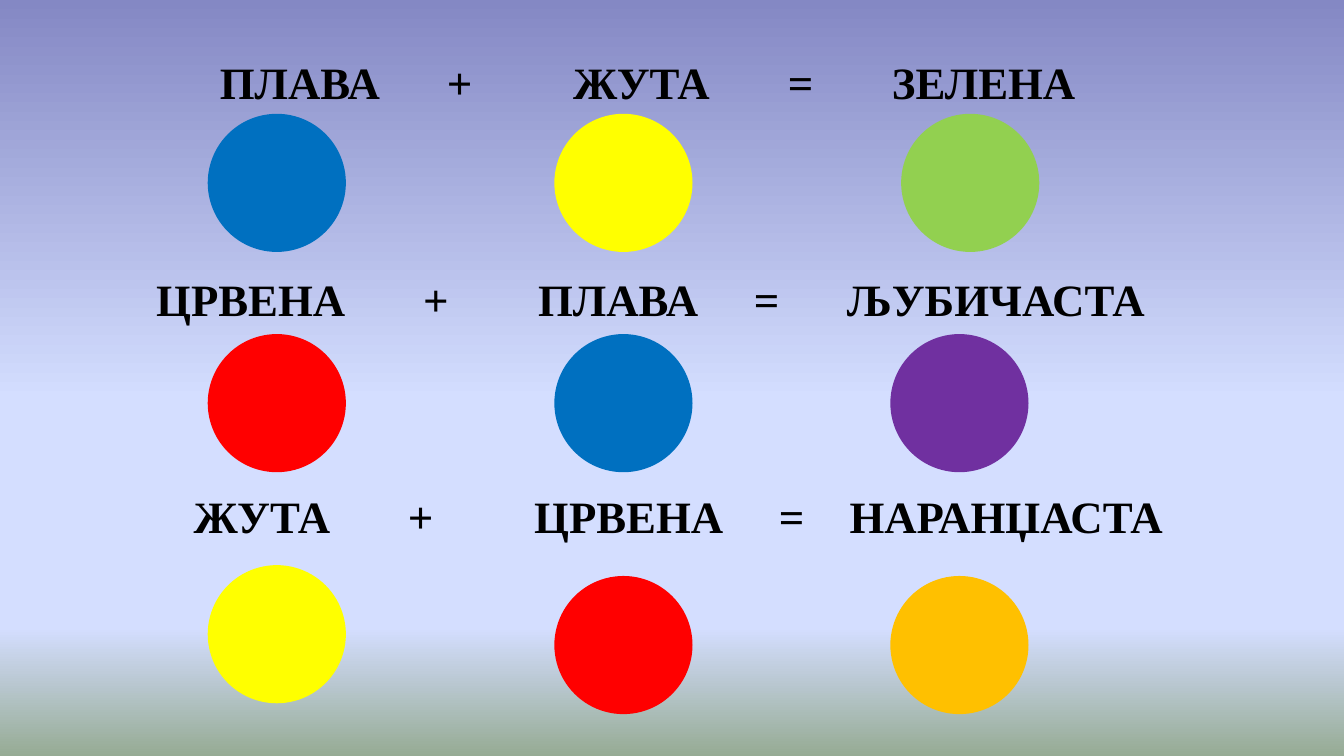
from copy import deepcopy

from pptx import Presentation
from pptx.dml.color import RGBColor
from pptx.enum import shapes, text
from pptx.oxml import ns
from pptx.util import Pt
from lxml import etree

FONT, SIZE = "Times New Roman", 24
ROW_GAP = 87.6
DIAMETER = 72
BLUE, YELLOW, RED = "0070C0", "FFFF00", "FF0000"
GREEN, PURPLE, ORANGE = "92D050", "7030A0", "FFC000"
SKY = [(0, "8488C4"), (0.53, "D4DEFF"), (0.83, "D4DEFF"), (1, "96AB94")]

# words, centre of each word, colours, left and top of each circle
MIXES = [
    (["ПЛАВА", "+", "ЖУТА", "=", "ЗЕЛЕНА"], [109, 194.6, 292, 377.3, 475.3],
     [BLUE, YELLOW, GREEN], [(112.3, 62), (298, 62), (483.8, 62)]),
    (["ЦРВЕНА", "+", "ПЛАВА", "=", "ЉУБИЧАСТА"], [82.7, 181.8, 279.5, 359, 481.8],
     [RED, BLUE, PURPLE], [(112.3, 180), (298, 180), (478, 180)]),
    (["ЖУТА", "+", "ЦРВЕНА", "=", "НАРАНЏАСТА"], [88.6, 173.7, 285.2, 372.5, 487.4],
     [YELLOW, RED, ORANGE], [(112.3, 303.8), (298, 309.6), (478, 309.6)]),
]


def rgb(value):
    return RGBColor.from_string(value)


def paint_background(s, stops):
    fill = s.background.fill
    fill.gradient()
    fill.gradient_angle = 270
    gs_list = s._element.find(".//" + ns.qn("a:gsLst"))
    while len(gs_list) < len(stops):
        gs_list.append(deepcopy(gs_list[0]))
    for stop, (position, color) in zip(fill.gradient_stops, stops):
        stop.position = position
        stop.color.rgb = rgb(color)


def set_center_tabs(p, centers):
    tabs = etree.SubElement(p._p.get_or_add_pPr(), ns.qn("a:tabLst"))
    for center in centers:
        etree.SubElement(tabs, ns.qn("a:tab"), pos=str(Pt(center)), algn="ctr")


def add_equations(s, left, top, width, height):
    """Write one line per mix, with each word centred on its own tab."""
    tf = s.shapes.add_textbox(Pt(left), Pt(top), Pt(width), Pt(height)).text_frame
    tf.word_wrap = True
    tf.vertical_anchor = text.MSO_ANCHOR.TOP
    tf.margin_top = Pt(6.8)
    for i, (words, centers, _, _) in enumerate(MIXES):
        p = tf.add_paragraph() if i else tf.paragraphs[0]
        p.text = "".join("\t" + word for word in words)
        p.alignment = text.PP_ALIGN.LEFT
        if i:
            p.space_before = Pt(ROW_GAP)
        set_center_tabs(p, centers)
        for r in p.runs:
            r.font.name, r.font.size, r.font.bold = FONT, Pt(SIZE), True
            r.font.color.rgb = rgb("000000")


def add_circle(s, left, top, color):
    sp = s.shapes.add_shape(shapes.MSO_SHAPE.OVAL, Pt(left), Pt(top),
                            Pt(DIAMETER), Pt(DIAMETER))
    sp.shadow.inherit = False
    sp.fill.solid()
    sp.fill.fore_color.rgb = rgb(color)
    sp.line.color.rgb = rgb(color)
    sp.line.width = Pt(2)


def main():
    prs = Presentation()
    prs.slide_width, prs.slide_height = Pt(720), Pt(405)
    s = prs.slides.add_slide(prs.slide_layouts[6])
    paint_background(s, SKY)
    add_equations(s, 44.6, 22.3, 607.7, 414.7)
    for _, _, colors, corners in MIXES:
        for color, (left, top) in zip(colors, corners):
            add_circle(s, left, top, color)
    prs.save("out.pptx")


if __name__ == "__main__":
    main()
